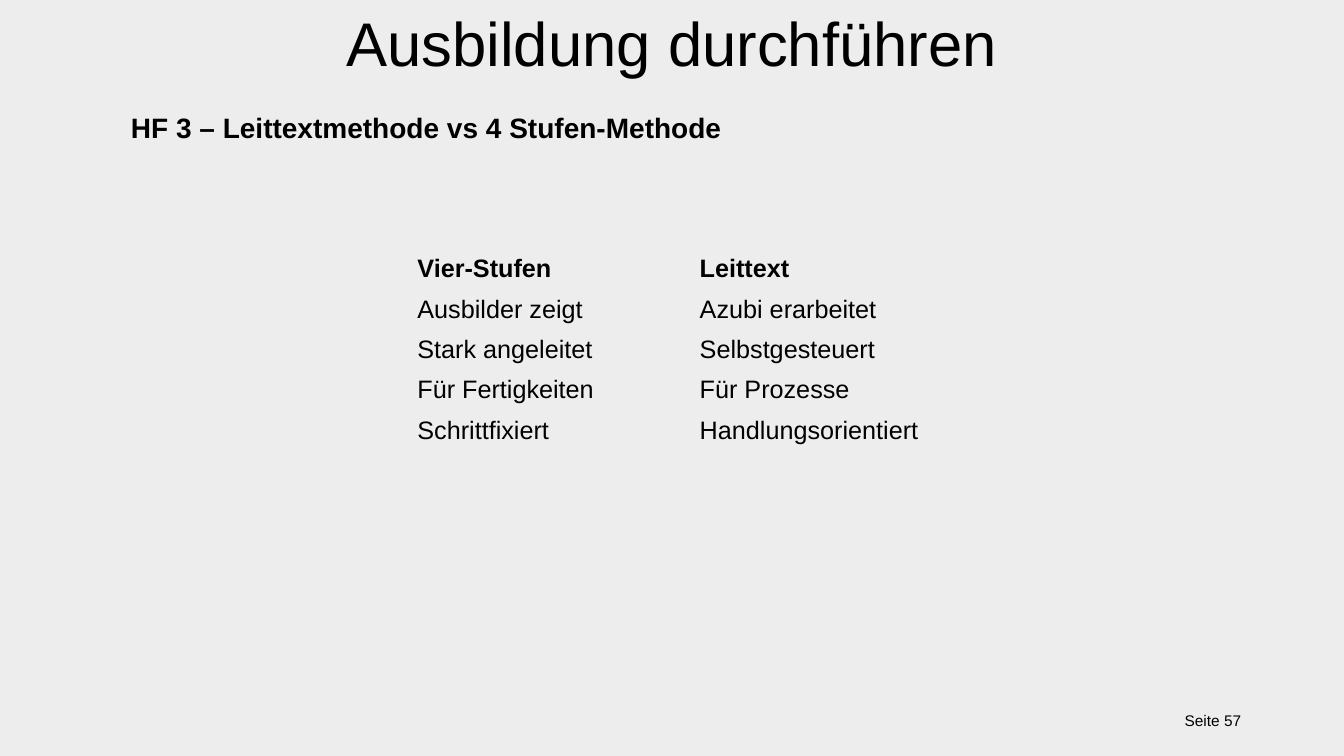
import pptx
import pptx.util
import pptx.dml.color
import pptx.enum.text
from dataclasses import dataclass
from pptx.oxml.ns import qn

# Content
TITLE = "Ausbildung durchführen"
SUBTITLE = "HF 3 – Leittextmethode vs 4 Stufen-Methode"
PAGE_LABEL = "Seite 57"
COMPARISON = [
    ("Vier-Stufen", "Leittext"),
    ("Ausbilder zeigt", "Azubi erarbeitet"),
    ("Stark angeleitet", "Selbstgesteuert"),
    ("Für Fertigkeiten", "Für Prozesse"),
    ("Schrittfixiert", "Handlungsorientiert"),
]


@dataclass(frozen=True)
class Theme:
    font: str = "Arial"
    ink: str = "000000"
    background: str = "EDEDED"
    title: int = 44
    subtitle: int = 20
    body: int = 18
    footer: int = 11
    plain_table: str = "{2D5ABB26-0587-4C30-8999-92F81FD0307C}"


THEME = Theme()
ALIGN = pptx.enum.text.PP_ALIGN
ANCHOR = pptx.enum.text.MSO_ANCHOR
Inches = pptx.util.Inches

# Layout in inches
SLIDE_WIDTH, SLIDE_HEIGHT = 13.33, 7.5
TITLE_WIDTH = 6.99
METHOD_COLUMNS = (2.8, 3.39)
ROW_HEIGHT = 0.4
TABLE_LEFT, TABLE_TOP = 4.04, 2.47


def write(paragraph, text, size, bold=False, align=ALIGN.LEFT):
    paragraph.alignment = align
    run = paragraph.add_run()
    run.text = text
    run.font.name = THEME.font
    run.font.size = pptx.util.Pt(size)
    run.font.bold = bold
    run.font.color.rgb = pptx.dml.color.RGBColor.from_string(THEME.ink)


def add_label(slide, area, text, size, bold=False, align=ALIGN.LEFT, anchor=ANCHOR.TOP):
    frame = slide.shapes.add_textbox(*map(Inches, area)).text_frame
    frame.word_wrap = True
    frame.vertical_anchor = anchor
    write(frame.paragraphs[0], text, size, bold, align)


def add_comparison(slide):
    area = (TABLE_LEFT, TABLE_TOP, sum(METHOD_COLUMNS), ROW_HEIGHT * len(COMPARISON))
    table = slide.shapes.add_table(
        len(COMPARISON), len(METHOD_COLUMNS), *map(Inches, area)
    ).table
    table.horz_banding = False
    table._tbl.tblPr.find(qn("a:tableStyleId")).text = THEME.plain_table
    for column, width in zip(table.columns, METHOD_COLUMNS):
        column.width = Inches(width)
    for row_index, entries in enumerate(COMPARISON):
        for column_index, entry in enumerate(entries):
            cell = table.cell(row_index, column_index)
            cell.fill.background()
            cell.vertical_anchor = ANCHOR.MIDDLE
            write(cell.text_frame.paragraphs[0], entry, THEME.body, bold=row_index == 0)


def main():
    deck = pptx.Presentation()
    deck.slide_width, deck.slide_height = Inches(SLIDE_WIDTH), Inches(SLIDE_HEIGHT)
    slide = deck.slides.add_slide(deck.slide_layouts[6])
    backdrop = slide.background.fill
    backdrop.solid()
    backdrop.fore_color.rgb = pptx.dml.color.RGBColor.from_string(THEME.background)

    # Headings
    title_left = (SLIDE_WIDTH - TITLE_WIDTH) / 2
    add_label(slide, (title_left, 0, TITLE_WIDTH, 0.84), TITLE, THEME.title, align=ALIGN.CENTER)
    add_label(slide, (1.2, 1.05, 11.05, 0.44), SUBTITLE, THEME.subtitle, bold=True)

    # Page number
    add_label(slide, (11.2, 6.95, 1.21, 0.4), PAGE_LABEL, THEME.footer,
              align=ALIGN.RIGHT, anchor=ANCHOR.MIDDLE)

    # Comparison of the two methods
    add_comparison(slide)
    deck.save("out.pptx")


if __name__ == "__main__":
    main()
